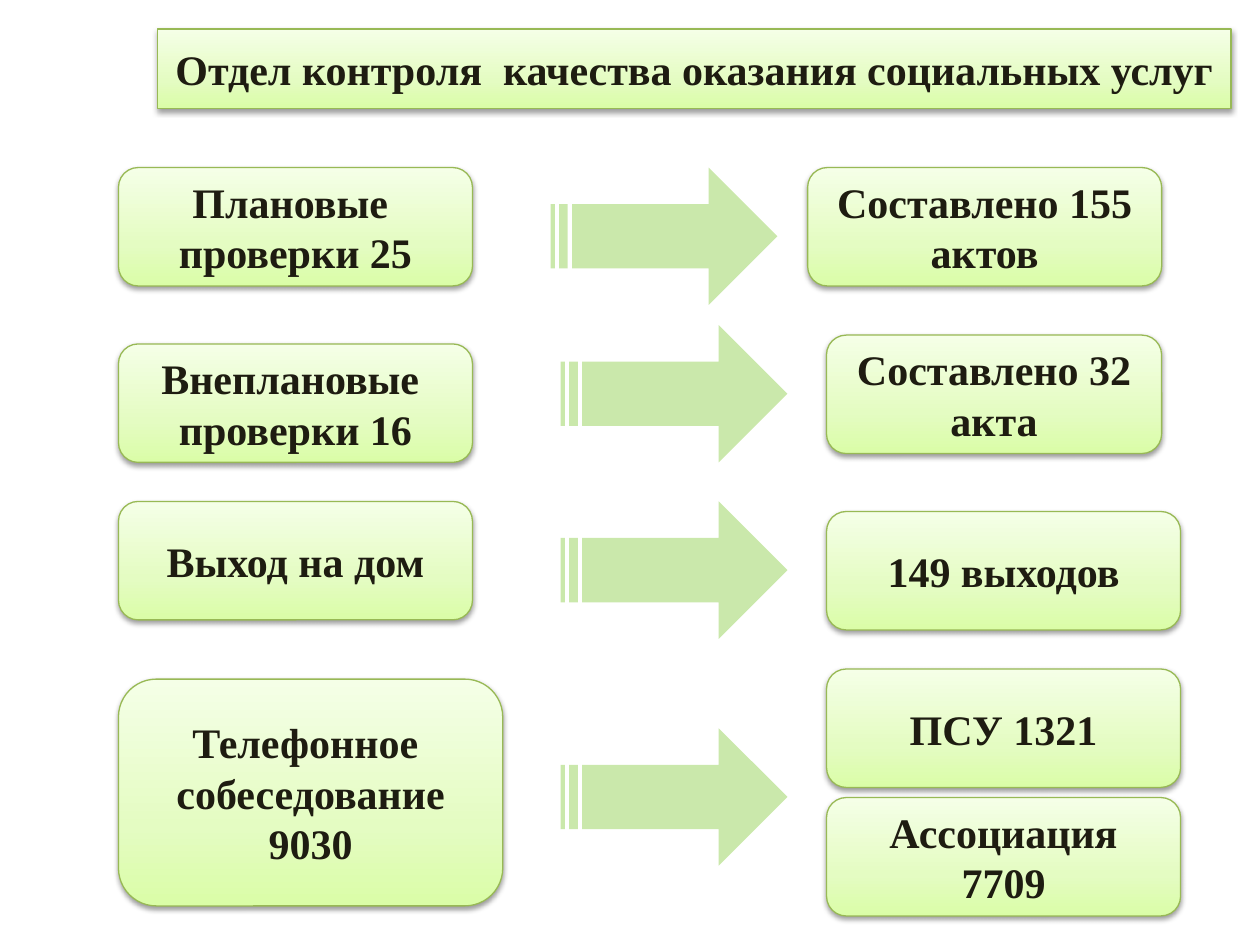
from copy import deepcopy
from dataclasses import dataclass

from lxml import etree
from pptx import Presentation
from pptx.dml.color import RGBColor
from pptx.enum import shapes, text
from pptx.oxml.ns import qn
from pptx.util import Inches, Pt


@dataclass(frozen=True)
class Theme:
    """Colours and type of the slide."""
    font: str = "Times New Roman"
    size: int = 24
    ink: str = "1E1C11"
    border: str = "98B955"
    arrow: str = "92D050"
    arrow_alpha: int = 48
    shadow: str = "000000"
    shadow_alpha: int = 38
    gradient: tuple = ((0, "DAFDA7"), (0.35, "E4FCC2"), (1, "F5FFE7"))


@dataclass(frozen=True)
class Card:
    """A rounded box with its wording, in inches."""
    wording: str
    left: float
    top: float
    width: float = 2.81
    height: float = 0.94


@dataclass(frozen=True)
class Arrow:
    """A striped arrow from a check to its result, in inches."""
    left: float
    top: float
    width: float = 1.8
    height: float = 1.09


THEME = Theme()
CHECKS_LEFT, ARROWS_LEFT, RESULTS_LEFT = 0.94, 4.45, 6.56

HEADING = Card("Отдел контроля  качества оказания социальных услуг", 1.25, 0.23, 8.52, 0.63)

CARDS = (
    Card("Плановые \nпроверки 25", CHECKS_LEFT, 1.33),
    Card("Составлено 155 актов", 6.41, 1.33),
    Card("Внеплановые \nпроверки 16", CHECKS_LEFT, 2.73),
    Card("Составлено 32 акта", RESULTS_LEFT, 2.66, width=2.66),
    Card("Выход на дом", CHECKS_LEFT, 3.98),
    Card("149 выходов", RESULTS_LEFT, 4.06),
    Card("Телефонное \nсобеседование\n9030", CHECKS_LEFT, 5.39, 3.05, 1.8),
    Card("ПСУ 1321", RESULTS_LEFT, 5.31),
    Card("Ассоциация\n7709", RESULTS_LEFT, 6.33),
)

ARROWS = (
    Arrow(4.37, 1.33),
    Arrow(ARROWS_LEFT, 2.58),
    Arrow(ARROWS_LEFT, 3.98),
    Arrow(ARROWS_LEFT, 5.78),
)


def box(item: Card | Arrow) -> tuple:
    """Return left, top, width and height as lengths."""
    return tuple(Inches(v) for v in (item.left, item.top, item.width, item.height))


def add_alpha(color, percent: int) -> None:
    """Make a colour element partly transparent."""
    etree.SubElement(color, qn("a:alpha"), val=str(percent * 1000))


def paint_gradient(shape) -> None:
    """Fill a shape with the theme gradient, darkest at the bottom."""
    shape.fill.gradient()
    shape.fill.gradient_angle = 90
    stop_list = shape._element.spPr.find(f".//{qn('a:gsLst')}")
    stop_list.append(deepcopy(stop_list[-1]))
    for stop, (position, color) in zip(shape.fill.gradient_stops, THEME.gradient):
        stop.position = position
        stop.color.rgb = RGBColor.from_string(color)


def cast_shadow(shape) -> None:
    """Give a shape a soft shadow below it."""
    shape.shadow.inherit = False
    effects = shape._element.spPr.find(qn("a:effectLst"))
    outer = etree.SubElement(effects, qn("a:outerShdw"), blurRad=str(Pt(3.1)),
                             dist=str(Pt(1.6)), dir="5400000", rotWithShape="0")
    add_alpha(etree.SubElement(outer, qn("a:srgbClr"), val=THEME.shadow), THEME.shadow_alpha)


def write(shape, wording: str) -> None:
    """Set centred bold wording in a shape."""
    frame = shape.text_frame
    frame.text = wording
    frame.word_wrap = True
    frame.auto_size = text.MSO_AUTO_SIZE.NONE
    frame.vertical_anchor = text.MSO_ANCHOR.MIDDLE
    for paragraph in frame.paragraphs:
        paragraph.alignment = text.PP_ALIGN.CENTER
        for run in paragraph.runs:
            run.font.name = THEME.font
            run.font.size = Pt(THEME.size)
            run.font.bold = True
            run.font.color.rgb = RGBColor.from_string(THEME.ink)


def dress(shape, card: Card) -> None:
    """Apply the card look and wording to a shape."""
    paint_gradient(shape)
    shape.line.color.rgb = RGBColor.from_string(THEME.border)
    shape.line.width = Pt(0.75)
    cast_shadow(shape)
    write(shape, card.wording)


def set_heading(slide, card: Card) -> None:
    """Turn the title placeholder into a rounded card."""
    title = slide.shapes.title
    title.left, title.top, title.width, title.height = box(card)
    outline = etree.SubElement(title._element.spPr, qn("a:prstGeom"), prst="roundRect")
    etree.SubElement(outline, qn("a:avLst"))
    dress(title, card)


def draw_card(slide, card: Card) -> None:
    """Draw one rounded card."""
    dress(slide.shapes.add_shape(shapes.MSO_SHAPE.ROUNDED_RECTANGLE, *box(card)), card)


def draw_arrow(slide, arrow: Arrow) -> None:
    """Draw one translucent striped arrow."""
    shape = slide.shapes.add_shape(shapes.MSO_SHAPE.STRIPED_RIGHT_ARROW, *box(arrow))
    shape.adjustments[0], shape.adjustments[1] = 0.468, 0.5
    shape.fill.solid()
    shape.fill.fore_color.rgb = RGBColor.from_string(THEME.arrow)
    add_alpha(shape._element.spPr.find(f"{qn('a:solidFill')}/{qn('a:srgbClr')}"), THEME.arrow_alpha)
    shape.line.fill.background()
    shape.shadow.inherit = False


def main() -> None:
    """Build the slide and save it."""
    deck = Presentation()
    deck.slide_width, deck.slide_height = Inches(10), Inches(7.5)
    slide = deck.slides.add_slide(deck.slide_layouts.get_by_name("Title Only"))
    set_heading(slide, HEADING)
    for card in CARDS:
        draw_card(slide, card)
    for arrow in ARROWS:
        draw_arrow(slide, arrow)
    deck.save("out.pptx")


if __name__ == "__main__":
    main()
